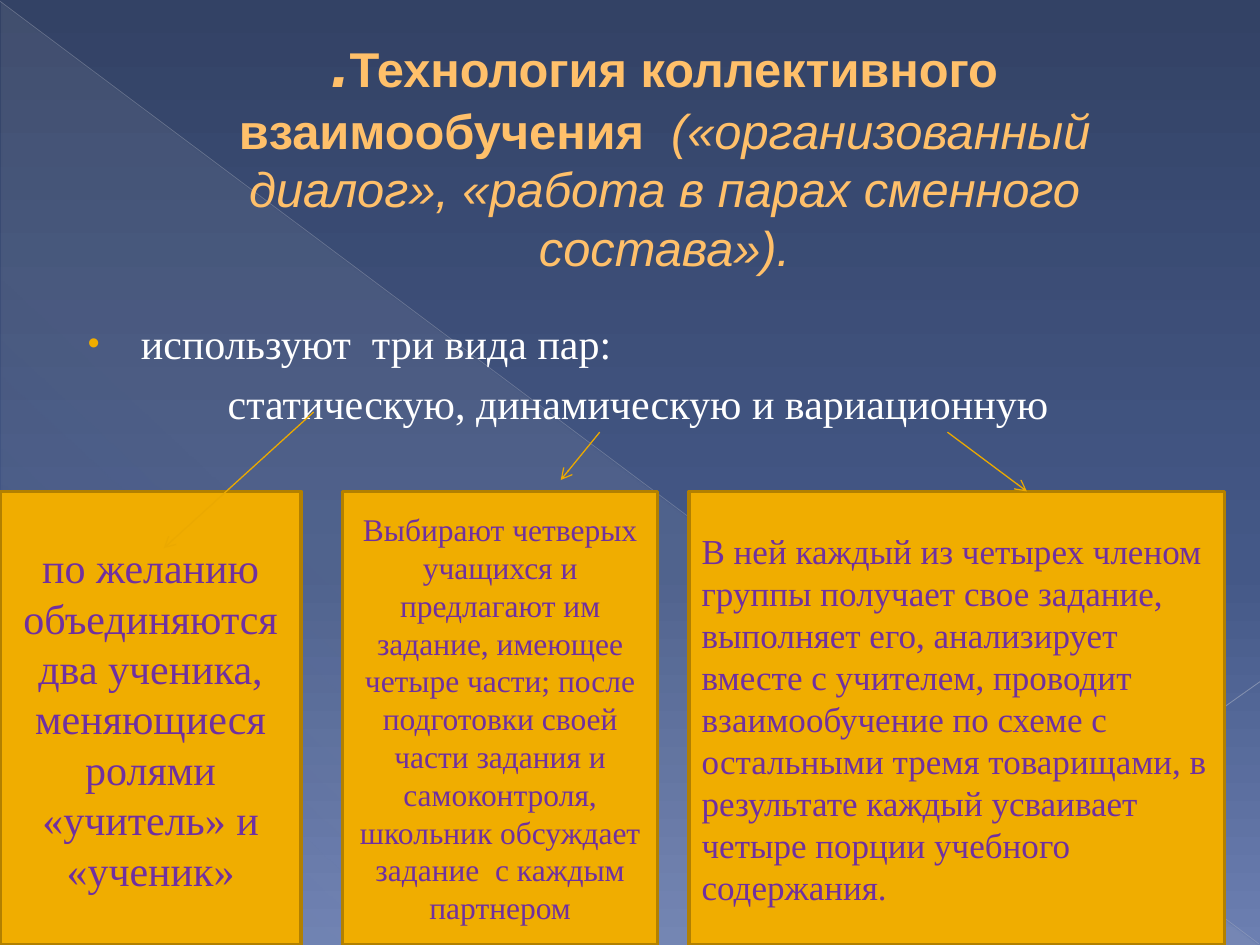
from dataclasses import dataclass

from lxml.etree import SubElement
from pptx import Presentation
from pptx.dml.color import RGBColor
from pptx.enum.shapes import MSO_CONNECTOR, MSO_SHAPE
from pptx.enum.text import MSO_ANCHOR, PP_ALIGN
from pptx.oxml.ns import qn
from pptx.util import Inches, Pt

COLUMNS, ROWS = 100, 75
CELL = Inches(0.1)
SERIF, SANS = "Times New Roman", "Arial"
AMBER, AMBER_EDGE, ARROW = "F0AD00", "B28000", "EBA900"
PEACH, PURPLE, WHITE = "FFC06A", "7030A0", "FFFFFF"


@dataclass
class Span:
    text: str
    size: float
    font: str
    colour: str
    bold: bool = False
    italic: bool = False


@dataclass
class Card:
    column: float
    width: float
    size: float
    text: str
    align: PP_ALIGN = PP_ALIGN.CENTER


@dataclass
class Line:
    start: tuple[float, float]
    end: tuple[float, float]
    colour: str = ARROW
    width: float = 0.75
    opacity: int = 100
    arrow: bool = True


CARD_ROW, CARD_ROWS = 39, 36
CARDS = [
    Card(0, 23.9, 24, "по желанию объединяются два ученика, меняющиеся ролями "
         "«учитель» и «ученик»"),
    Card(27.2, 25, 18, "Выбирают четверых учащихся и предлагают им задание, имеющее "
         "четыре части; после подготовки своей части задания и самоконтроля, "
         "школьник обсуждает задание  с каждым партнером"),
    Card(54.7, 42.5, 20, "В ней каждый из четырех членом группы получает свое задание, "
         "выполняет его, анализирует вместе с учителем, проводит взаимообучение по "
         "схеме с остальными тремя товарищами, в результате каждый усваивает четыре "
         "порции учебного содержания.", PP_ALIGN.LEFT),
]
BACKDROP_LINES = [
    Line((0, 0.1), (99.9, 74.9), "B9BDC8", 0.39, 35, False),
    Line((100, 54.1), (70.7, 74.9), "C1C4CE", 0.47, 45, False),
]
ARROWS = [
    Line((24.9, 32.7), (13, 43.5)),
    Line((75.2, 34.3), (81.5, 39)),
    Line((47.6, 34.3), (44.5, 38.1)),
]
TITLE = [
    Span(".", 37.8, SANS, PEACH, True, True),
    Span("Технология коллективного взаимообучения ", 27.9, SANS, PEACH, True),
    Span(" («организованный диалог», «работа в парах сменного состава»).",
         27.9, SANS, PEACH, italic=True),
]


def grid(*cells: float) -> list[int]:
    return [round(cell * CELL) for cell in cells]


def rgb(colour: str) -> RGBColor:
    return RGBColor.from_string(colour)


def add_opacity(colour_node, percent: int) -> None:
    if percent < 100:
        SubElement(colour_node, qn("a:alpha"), val=str(percent * 1000))


def paint_gradient(fill, element, stops: list[tuple[int, str, int]], angle: int) -> None:
    """Fill with (position, colour, opacity) stops, the angle running clockwise."""
    fill.gradient()
    stop_list = element.find(".//" + qn("a:gsLst"))
    for old_stop in list(stop_list):
        stop_list.remove(old_stop)
    for position, colour, opacity in stops:
        stop = SubElement(stop_list, qn("a:gs"), pos=str(position * 1000))
        add_opacity(SubElement(stop, qn("a:srgbClr"), val=colour), opacity)
    element.find(".//" + qn("a:lin")).set("ang", str(angle * 60000))


def write(paragraph, spans: list[Span], align: PP_ALIGN) -> None:
    paragraph.alignment = align
    for span in spans:
        run = paragraph.add_run()
        run.text = span.text
        font = run.font
        font.size, font.name = Pt(span.size), span.font
        font.bold, font.italic = span.bold, span.italic
        font.color.rgb = rgb(span.colour)


def indent(paragraph, margin: float, first: float = 0) -> None:
    properties = paragraph._p.get_or_add_pPr()
    properties.set("marL", str(Inches(margin)))
    properties.set("indent", str(Inches(first)))


def add_bullet(paragraph, colour: str, percent: int) -> None:
    properties = paragraph._p.get_or_add_pPr()
    SubElement(SubElement(properties, qn("a:buClr")), qn("a:srgbClr"), val=colour)
    SubElement(properties, qn("a:buSzPct"), val=str(percent * 1000))
    SubElement(properties, qn("a:buFont"), typeface=SANS)
    SubElement(properties, qn("a:buChar"), char="•")


def draw_line(page, line: Line) -> None:
    connector = page.shapes.add_connector(
        MSO_CONNECTOR.STRAIGHT, *grid(*line.start, *line.end))
    connector.line.width = Pt(line.width)
    connector.line.color.rgb = rgb(line.colour)
    properties = connector._element.spPr
    add_opacity(properties.find(".//" + qn("a:srgbClr")), line.opacity)
    if line.arrow:
        SubElement(connector.line._get_or_add_ln(), qn("a:tailEnd"), type="arrow")
    SubElement(properties, qn("a:effectLst"))


def draw_backdrop(page) -> None:
    paint_gradient(page.background.fill, page._element,
                   [(0, "334265", 100), (60, "445887", 100), (100, "6C7FB1", 100)], 90)
    triangle = page.shapes.add_shape(
        MSO_SHAPE.RIGHT_TRIANGLE, *grid(0.1, 0.2, COLUMNS - 0.2, ROWS - 0.2))
    triangle.shadow.inherit = False
    triangle.line.fill.background()
    paint_gradient(triangle.fill, triangle._element,
                   [(0, "D4D4D6", 10), (70, "D4D4D6", 8), (100, "D4D4D6", 1)], 133)
    for line in BACKDROP_LINES:
        draw_line(page, line)


def draw_title(page) -> None:
    """The deep bottom inset lifts the centred title above its box."""
    frame = page.shapes.add_textbox(*grid(5.1, 8.4, 90, 18.1)).text_frame
    frame.word_wrap = True
    frame.vertical_anchor = MSO_ANCHOR.MIDDLE
    frame.margin_bottom = Inches(1.18)
    paragraph = frame.paragraphs[0]
    write(paragraph, TITLE, PP_ALIGN.CENTER)
    indent(paragraph, 0.53)


def draw_body(page) -> None:
    frame = page.shapes.add_textbox(*grid(5.3, 24.7, 90, 50)).text_frame
    frame.word_wrap = True
    lead, kinds = frame.paragraphs[0], frame.add_paragraph()
    write(lead, [Span("используют \u00a0три вида пар:", 24, SERIF, WHITE)], PP_ALIGN.LEFT)
    write(kinds, [Span("статическую, динамическую и вариационную", 24, SERIF, WHITE)],
          PP_ALIGN.CENTER)
    indent(lead, 0.49, -0.42)
    indent(kinds, 0.07)
    for paragraph in (lead, kinds):
        paragraph.space_before = Pt(5.5)
    add_bullet(lead, AMBER, 80)


def draw_card(page, card: Card) -> None:
    box = page.shapes.add_shape(
        MSO_SHAPE.RECTANGLE, *grid(card.column, CARD_ROW, card.width, CARD_ROWS))
    box.shadow.inherit = False
    box.fill.solid()
    box.fill.fore_color.rgb = rgb(AMBER)
    box.line.color.rgb = rgb(AMBER_EDGE)
    box.line.width = Pt(2)
    frame = box.text_frame
    frame.word_wrap = True
    frame.vertical_anchor = MSO_ANCHOR.MIDDLE
    write(frame.paragraphs[0], [Span(card.text, card.size, SERIF, PURPLE)], card.align)


def main() -> None:
    deck = Presentation()
    deck.slide_width, deck.slide_height = grid(COLUMNS, ROWS)
    page = deck.slides.add_slide(deck.slide_layouts[6])
    draw_backdrop(page)
    draw_title(page)
    draw_body(page)
    for card in CARDS:
        draw_card(page, card)
    for arrow in ARROWS:
        draw_line(page, arrow)
    deck.save("out.pptx")


if __name__ == "__main__":
    main()
